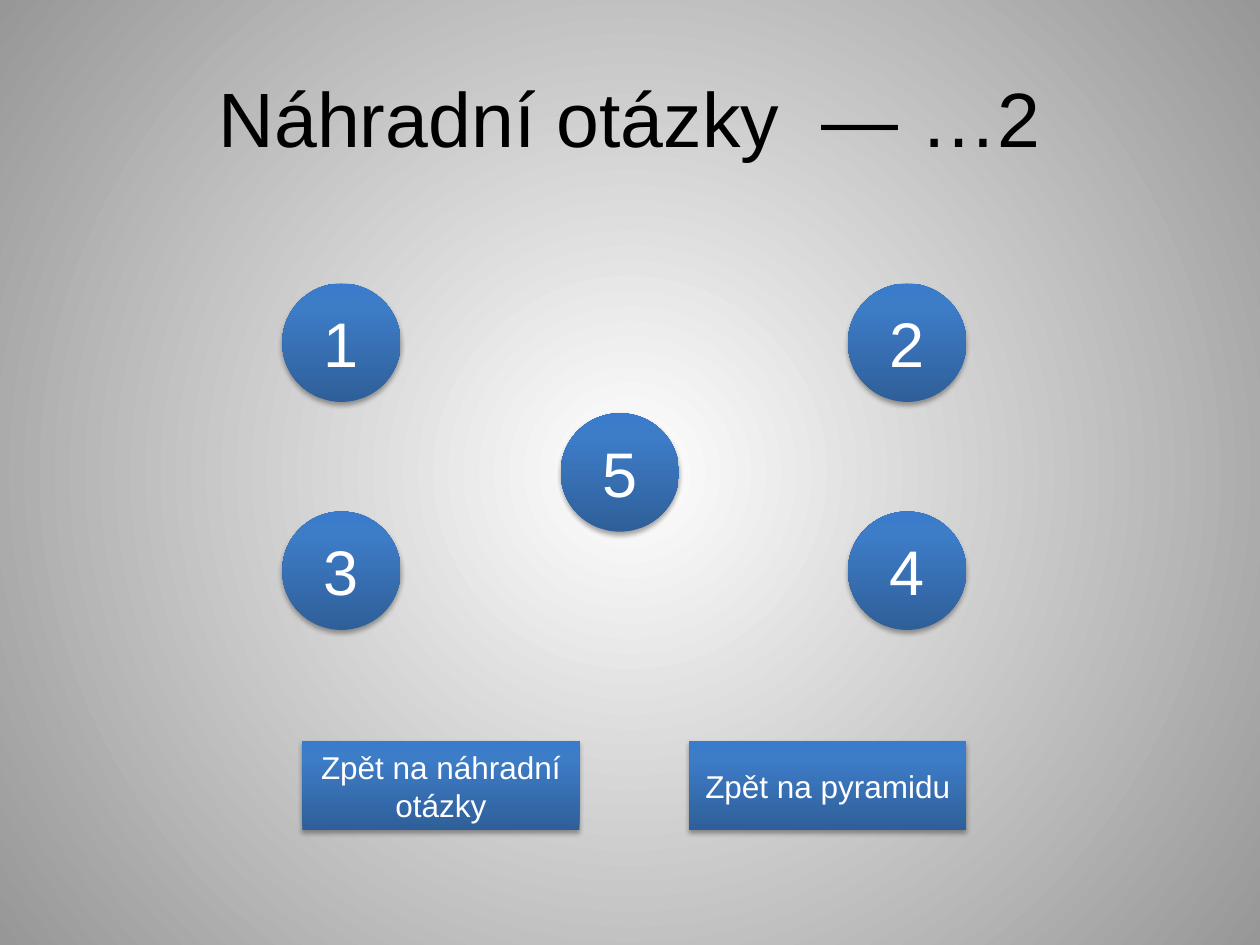
from dataclasses import dataclass
from lxml.etree import SubElement as Sub
from pptx import Presentation
from pptx.dml.color import RGBColor as RGB
from pptx.enum.shapes import MSO_SHAPE as Kind
from pptx.enum.text import MSO_ANCHOR as Anchor, PP_ALIGN as Align
from pptx.oxml import parse_xml
from pptx.oxml.ns import nsdecls, qn
from pptx.util import Inches, Pt

HUES = {"ink": "000000", "paper": "FFFFFF", "edge": "979797",
        "deep": "2F5F99", "mid": "3D7CC7", "top": "3A7CCB"}
WIDE, HIGH = Inches(10), Inches(7.5)
BALL = (9.4, 12.53)
PLATE = (22, 9.47)
LEFT, RIGHT = 22.4, 67.3
UPPER, LOWER = 30, 54.13
GLOW = ('<a:path path="circle"><a:fillToRect l="50000" t="50000" '
        'r="50000" b="50000"/></a:path>')
RISE = '<a:lin ang="16200000" scaled="0"/>'


@dataclass
class Button:
    """A labelled button, placed in percent of the slide."""
    label: str
    x: float
    y: float
    size: tuple[float, float] = BALL
    kind: Kind = Kind.OVAL
    points: int = 36


BUTTONS = [
    Button("1", LEFT, UPPER),
    Button("3", LEFT, LOWER),
    Button("5", 44.5, 43.73),
    Button("2", RIGHT, UPPER),
    Button("4", RIGHT, LOWER),
    Button("Zpět na náhradní otázky", 24, 78.4, PLATE, Kind.RECTANGLE, 18),
    Button("Zpět na pyramidu", 54.7, 78.4, PLATE, Kind.RECTANGLE, 18),
]


def area(x: float, y: float, w: float, h: float) -> tuple[int, ...]:
    """Turn percent of the slide into lengths."""
    return tuple(int(part * side / 100) for part, side in
                 ((x, WIDE), (y, HIGH), (w, WIDE), (h, HIGH)))


def blend(fill, root, stops: dict[int, str], course: str) -> None:
    """Give a fill its gradient stops and course."""
    fill.gradient()
    old = root.find(".//" + qn("a:gradFill"))
    marks = "".join(f'<a:gs pos="{at * 1000}"><a:srgbClr val="{HUES[hue]}"/></a:gs>'
                    for at, hue in stops.items())
    new = parse_xml(f'<a:gradFill {nsdecls("a")} rotWithShape="1">'
                    f'<a:gsLst>{marks}</a:gsLst>{course}</a:gradFill>')
    old.getparent().replace(old, new)


def shade(shape) -> None:
    """Cast a soft shadow straight down."""
    shape.shadow.inherit = False
    effects = shape.element.spPr.find(qn("a:effectLst"))
    cast = Sub(effects, qn("a:outerShdw"), blurRad=str(Pt(3.1)), dist=str(Pt(1.8)),
               dir="5400000", rotWithShape="0")
    tint = Sub(cast, qn("a:srgbClr"), val=HUES["ink"])
    Sub(tint, qn("a:alpha"), val="35000")


def write(shape, text: str, *, size: int, hue: str, font: str = "Arial") -> None:
    """Set centred text in a shape."""
    frame = shape.text_frame
    frame.word_wrap = True
    frame.vertical_anchor = Anchor.MIDDLE
    para = frame.paragraphs[0]
    para.alignment = Align.CENTER
    run = para.add_run()
    run.text = text
    run.font.name, run.font.size = font, Pt(size)
    run.font.color.rgb = RGB.from_string(HUES[hue])


def draw(slide, item: Button) -> None:
    """Draw one button."""
    shape = slide.shapes.add_shape(item.kind, *area(item.x, item.y, *item.size))
    blend(shape.fill, shape.element, {0: "deep", 80: "mid", 100: "top"}, RISE)
    shape.line.fill.background()
    shade(shape)
    write(shape, item.label, size=item.points, hue="paper")


def main() -> None:
    """Build and save the slide."""
    deck = Presentation()
    deck.slide_width, deck.slide_height = WIDE, HIGH
    slide = deck.slides.add_slide(deck.slide_layouts[5])
    blend(slide.background.fill, slide.element, {0: "paper", 100: "edge"}, GLOW)
    title = slide.shapes.title
    title.left, title.top, title.width, title.height = area(5, 4, 90, 16.67)
    write(title, "Náhradní otázky  — …2", size=44, hue="ink")
    for item in BUTTONS:
        draw(slide, item)
    deck.save("out.pptx")


if __name__ == "__main__":
    main()
